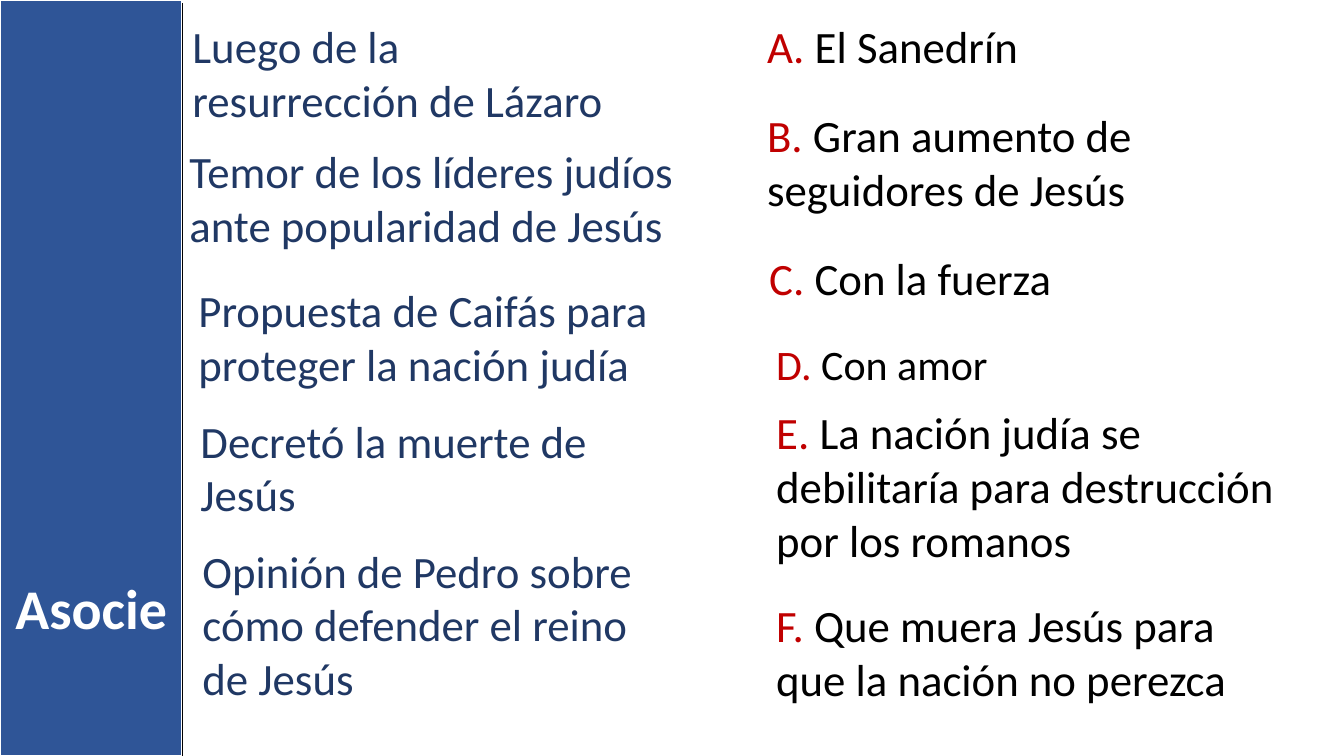
"""Builds a matching exercise slide: statements on the left, lettered answers on the right."""
from lxml import etree
from pptx import Presentation
from pptx.dml.color import RGBColor
from pptx.enum.shapes import MSO_CONNECTOR, MSO_SHAPE
from pptx.enum.text import MSO_ANCHOR, MSO_AUTO_SIZE, PP_ALIGN
from pptx.oxml.ns import qn
from pptx.util import Inches, Pt

RECTANGLE = MSO_SHAPE.RECTANGLE
STRAIGHT = MSO_CONNECTOR.STRAIGHT
TOP = MSO_ANCHOR.TOP
GROW = MSO_AUTO_SIZE.SHAPE_TO_FIT_TEXT
CENTER = PP_ALIGN.CENTER

FONT = "Calibri"
WHITE, BLACK, BLUE, NAVY, RED = "FFFFFF", "000000", "2F5597", "203864", "C00000"
SLIDE_WIDTH, SLIDE_HEIGHT = 13.33, 7.5
BAND_WIDTH = 1.81
TITLE_ONLY = 5

HEADING = "Asocie"
STATEMENTS = [
    ("Luego de la resurrección de Lázaro", (1.81, 0.14, 4.35, 1.18)),
    ("Temor de los líderes judíos ante popularidad de Jesús", (1.78, 1.38, 5.29, 1.18)),
    ("Propuesta de Caifás para proteger la nación judía", (1.87, 2.76, 5.1, 1.18)),
    ("Decretó la muerte de Jesús", (1.89, 4.05, 4.94, 1.18)),
    ("Opinión de Pedro sobre cómo defender el reino de Jesús", (1.91, 5.34, 4.77, 1.72)),
]
ANSWERS = [
    ("A. ", "El Sanedrín", 32, (7.51, 0.14, 5.04, 0.64)),
    ("B. ", "Gran aumento de seguidores de Jesús", 32, (7.51, 1.02, 5.29, 1.18)),
    ("C. ", "Con la fuerza", 32, (7.53, 2.44, 4.88, 0.64)),
    ("D. ", "Con amor", 30, (7.6, 3.31, 5.29, 0.61)),
    ("E. ", "La nación judía se debilitaría para destrucción por los romanos", 32,
     (7.6, 3.97, 5.53, 1.72)),
    ("F. ", "Que muera Jesús para que la nación no perezca", 32, (7.6, 5.88, 4.97, 1.18)),
]


def color(value):
    return RGBColor.from_string(value)


def write(frame, pieces, size, bold=False):
    frame.word_wrap = True
    frame.auto_size = GROW
    frame.vertical_anchor = TOP
    paragraph = frame.paragraphs[0]
    for words, shade in pieces:
        run = paragraph.add_run()
        run.text = words
        run.font.name = FONT
        run.font.size = Pt(size)
        run.font.bold = bold
        run.font.color.rgb = color(shade)
    return paragraph


def add_text(slide, place, pieces, size):
    box = slide.shapes.add_textbox(*map(Inches, place))
    write(box.text_frame, pieces, size)


def add_heading(slide):
    band = slide.shapes.add_shape(RECTANGLE, 0, 0, Inches(BAND_WIDTH), Inches(SLIDE_HEIGHT))
    band.shadow.inherit = False
    band.fill.solid()
    band.fill.fore_color.rgb = color(BLUE)
    band.line.color.rgb = color(WHITE)
    band.line.width = Pt(1.5)
    heading = slide.shapes.title
    heading.element.addprevious(band.element)
    heading.left, heading.top = 0, Inches(5.64)
    heading.width, heading.height = Inches(BAND_WIDTH), Inches(0.77)
    write(heading.text_frame, [(HEADING, WHITE)], 40, bold=True).alignment = CENTER


def add_edge(slide):
    x = Inches(BAND_WIDTH)
    edge = slide.shapes.add_connector(STRAIGHT, x, Inches(0.03), x, Inches(SLIDE_HEIGHT))
    edge.line.color.rgb = color(BLACK)
    edge.line.width = Pt(1)
    etree.SubElement(edge.element.spPr, qn("a:effectLst"))


def main():
    deck = Presentation()
    deck.slide_width, deck.slide_height = Inches(SLIDE_WIDTH), Inches(SLIDE_HEIGHT)
    slide = deck.slides.add_slide(deck.slide_layouts[TITLE_ONLY])
    add_heading(slide)
    for statement, place in STATEMENTS:
        add_text(slide, place, [(statement, NAVY)], 32)
    for letter, answer, size, place in ANSWERS:
        add_text(slide, place, [(letter, RED), (answer, BLACK)], size)
    add_edge(slide)
    deck.save("out.pptx")


if __name__ == "__main__":
    main()
